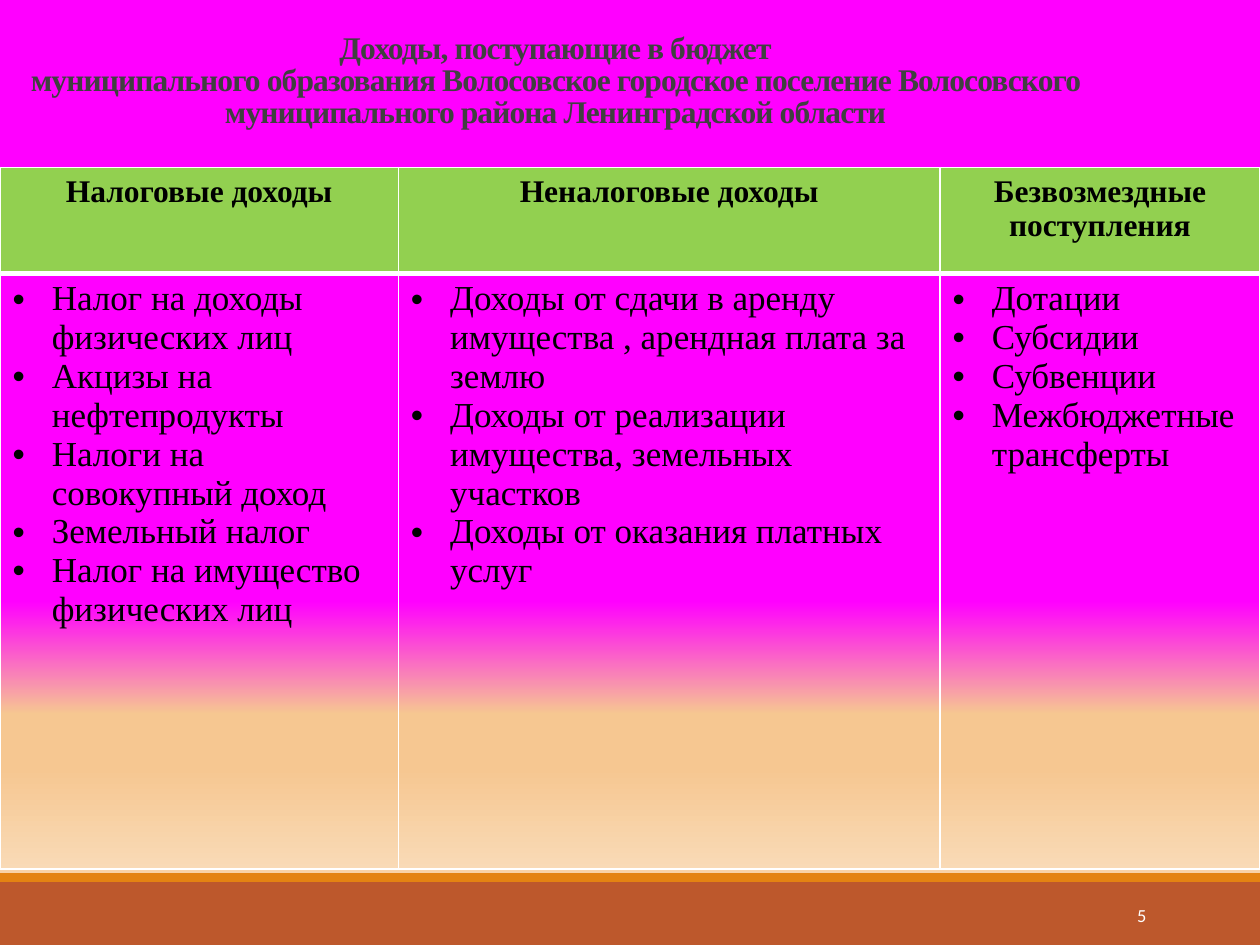
from lxml import etree
from pptx import Presentation
from pptx.dml.color import RGBColor
from pptx.enum.shapes import MSO_SHAPE
from pptx.enum.text import MSO_ANCHOR, PP_ALIGN
from pptx.oxml.ns import qn
from pptx.util import Cm, Pt

RECTANGLE = MSO_SHAPE.RECTANGLE
BOTTOM, MIDDLE = MSO_ANCHOR.BOTTOM, MSO_ANCHOR.MIDDLE
CENTER, RIGHT = PP_ALIGN.CENTER, PP_ALIGN.RIGHT
SERIF, SANS = "Times New Roman", "Calibri"

GRADIENT = [(55, "FF00FF"), (74, "F6C791"), (83, "F6C791"), (100, "F9DAB6")]
TITLE = ("Доходы, поступающие в бюджет\v"
         "муниципального образования Волосовское городское поселение "
         "Волосовского муниципального района Ленинградской области")
INCOME = [
    ("Налоговые доходы", 8.03, [
        "Налог на доходы физических лиц",
        "Акцизы на нефтепродукты",
        "Налоги на совокупный доход",
        "Земельный налог",
        "Налог на имущество физических лиц"]),
    ("Неналоговые доходы", 10.92, [
        "Доходы от сдачи в аренду имущества , арендная плата за землю",
        "Доходы от реализации имущества, земельных участков",
        "Доходы от оказания платных услуг"]),
    ("Безвозмездные поступления", 6.45, [
        "Дотации", "Субсидии", "Субвенции", "Межбюджетные трансферты"]),
]


def color(value):
    return RGBColor.from_string(value)


def style(paragraph, size, font, hex_color, bold=False, align=None):
    paragraph.font.size = Pt(size)
    paragraph.font.name = font
    paragraph.font.bold = bold
    paragraph.font.color.rgb = color(hex_color)
    paragraph.alignment = align


def fill_gradient(fill, owner):
    """Vertical gradient; owner is the XML element that holds the fill."""
    fill.gradient()
    fill.gradient_angle = 270
    stops = next(owner.iter(qn("a:gsLst")))
    for stop in list(stops):
        stops.remove(stop)
    for percent, value in GRADIENT:
        stop = etree.SubElement(stops, qn("a:gs"), pos=str(percent * 1000))
        etree.SubElement(stop, qn("a:srgbClr"), val=value)


def set_borders(cell, top, bottom):
    properties = cell._tc.get_or_add_tcPr()
    sides = [("a:lnL", 1), ("a:lnR", 1), ("a:lnT", top), ("a:lnB", bottom)]
    for index, (tag, width) in enumerate(sides):
        border = etree.Element(qn(tag), w=str(Pt(width)))
        solid = etree.SubElement(border, qn("a:solidFill"))
        etree.SubElement(solid, qn("a:srgbClr"), val="FFFFFF")
        properties.insert(index, border)


def add_bullet(paragraph):
    properties = paragraph._p.get_or_add_pPr()
    properties.set("marL", str(Cm(0.79)))
    properties.set("indent", str(-Cm(0.79)))
    etree.SubElement(properties, qn("a:buFont"), typeface="Arial")
    etree.SubElement(properties, qn("a:buChar"), char="•")


def add_text(slide, text, left, top, width, height, anchor):
    frame = slide.shapes.add_textbox(
        Cm(left), Cm(top), Cm(width), Cm(height)).text_frame
    frame.word_wrap = True
    frame.vertical_anchor = anchor
    frame.paragraphs[0].text = text
    return frame


def add_title(slide, left, top, width, height):
    frame = add_text(slide, TITLE, left, top, width, height, BOTTOM)
    frame.margin_bottom = Cm(0.76)
    heading = frame.paragraphs[0]
    style(heading, 18, SERIF, "404040", True, CENTER)
    heading.line_spacing = 0.85
    for run in heading.runs:
        run._r.get_or_add_rPr().set("spc", "-50")


def add_income_table(slide, left, top, width, header_height, body_height):
    table = slide.shapes.add_table(
        2, len(INCOME), Cm(left), Cm(top), Cm(width),
        Cm(header_height + body_height)).table
    table.rows[0].height = Cm(header_height)
    table.rows[1].height = Cm(body_height)
    for column, (heading, column_width, sources) in enumerate(INCOME):
        table.columns[column].width = Cm(column_width)

        # Heading of the income group
        header = table.cell(0, column)
        header.text = heading
        style(header.text_frame.paragraphs[0], 18, SERIF, "000000", True, CENTER)
        header.fill.solid()
        header.fill.fore_color.rgb = color("92D050")
        set_borders(header, 1, 3)

        # Bulleted sources of income
        body = table.cell(1, column)
        body.text = "\n".join(sources)
        for source in body.text_frame.paragraphs:
            style(source, 20, SERIF, "000000")
            add_bullet(source)
        fill_gradient(body.fill, body._tc)
        set_borders(body, 3, 1)


def add_footer(slide, left, top, width, height):
    # Broad band with a thin stripe above it
    stripe = 0.18
    for band_top, band_height, value in [(top + stripe, height - stripe, "BD582C"),
                                         (top, stripe, "E48312")]:
        band = slide.shapes.add_shape(
            RECTANGLE, Cm(left), Cm(band_top), Cm(width), Cm(band_height))
        band.shadow.inherit = False
        band.fill.solid()
        band.fill.fore_color.rgb = color(value)
        band.line.fill.background()

    # Page number
    number = add_text(slide, "5", left + 20.62, top + 0.33, 2.74, 1.02, MIDDLE)
    style(number.paragraphs[0], 10.5, SANS, "FFFFFF", align=RIGHT)


def main():
    deck = Presentation()
    deck.slide_width, deck.slide_height = Cm(25.4), Cm(19.05)
    slide = deck.slides.add_slide(deck.slide_layouts[6])
    fill_gradient(slide.background.fill, slide._element)
    add_footer(slide, 0, 17.6, 25.4, 1.45)
    add_title(slide, 0, -1.68, 22.4, 5.06)
    add_income_table(slide, 0, 3.38, 25.4, 2.13, 12.01)
    deck.save("out.pptx")


if __name__ == "__main__":
    main()
